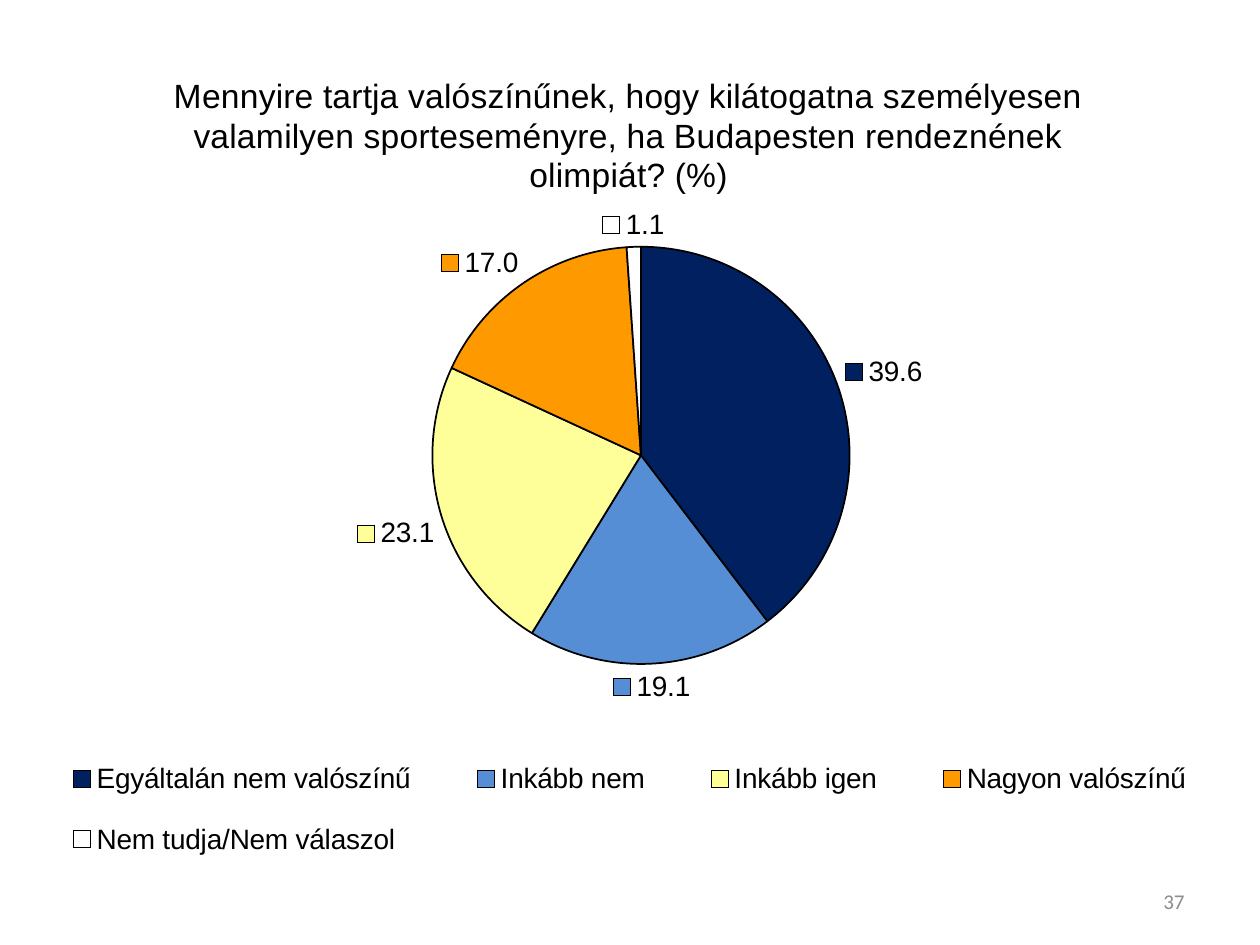
from dataclasses import dataclass

from pptx import Presentation
from pptx.chart.data import CategoryChartData
from pptx.dml.color import RGBColor
from pptx.enum.chart import XL_CHART_TYPE, XL_LABEL_POSITION, XL_LEGEND_POSITION
from pptx.enum.text import MSO_ANCHOR, PP_ALIGN
from pptx.oxml import parse_xml
from pptx.oxml.ns import nsdecls
from pptx.util import Inches, Pt


@dataclass(frozen=True)
class Theme:
    text: str = "000000"
    muted: str = "8C8C8C"
    chart_font: str = "Arial"
    number_font: str = "Calibri"
    title_size: float = 19.2
    chart_size: int = 16
    number_size: int = 12
    outline: int = 1


QUESTION = (
    "Mennyire tartja valószínűnek, hogy kilátogatna személyesen "
    "valamilyen sporteseményre, ha Budapesten rendeznének olimpiát? (%)"
)
ANSWERS = [
    ("Egyáltalán nem valószínű", 39.6, "002060"),
    ("Inkább nem", 19.1, "558ED5"),
    ("Inkább igen", 23.1, "FFFF99"),
    ("Nagyon valószínű", 17.0, "FF9900"),
    ("Nem tudja/Nem válaszol", 1.1, "FFFFFF"),
]


def layout_xml(x, y, width=None, height=None, inner=False):
    """Manual chart layout, in fractions of the chart area."""
    parts = [("layoutTarget", "inner")] if inner else []
    parts += [("xMode", "edge"), ("yMode", "edge"), ("x", x), ("y", y)]
    if width is not None:
        parts += [("w", width), ("h", height)]
    body = "".join(f'<c:{tag} val="{value}"/>' for tag, value in parts)
    return parse_xml(
        f'<c:layout {nsdecls("c")}><c:manualLayout>{body}</c:manualLayout></c:layout>'
    )


def place(element, layout, before):
    """Swap in a layout ahead of the first following sibling named in before."""
    for old in element.xpath("./c:layout"):
        element.remove(old)
    followers = element.xpath("|".join(f"./c:{tag}" for tag in before))
    followers[0].addprevious(layout)


class SlideBuilder:
    def __init__(self, slide, theme):
        self.slide = slide
        self.theme = theme

    def style(self, font, size, family, color):
        font.size = Pt(size)
        font.name = family
        font.bold = False
        font.color.rgb = RGBColor.from_string(color)

    def page_number(self, number, left, top, width, height):
        box = self.slide.shapes.add_textbox(
            Inches(left), Inches(top), Inches(width), Inches(height)
        )
        frame = box.text_frame
        frame.word_wrap = True
        frame.vertical_anchor = MSO_ANCHOR.MIDDLE
        para = frame.paragraphs[0]
        para.alignment = PP_ALIGN.RIGHT
        span = para.add_run()
        span.text = number
        self.style(span.font, self.theme.number_size, self.theme.number_font, self.theme.muted)

    def pie(self, title, answers, left, top, width, height):
        theme = self.theme
        names, values, colors = zip(*answers)
        data = CategoryChartData(number_format="###0.0")
        data.categories = names
        data.add_series("Series 1", values)
        chart = self.slide.shapes.add_chart(
            XL_CHART_TYPE.PIE, Inches(left), Inches(top), Inches(width), Inches(height), data
        ).chart
        self.style(chart.font, theme.chart_size, theme.chart_font, theme.text)

        chart.has_title = True
        span = chart.chart_title.text_frame.paragraphs[0].add_run()
        span.text = title
        self.style(span.font, theme.title_size, theme.chart_font, theme.text)
        chart.chart_title.include_in_layout = False

        chart.has_legend = True
        chart.legend.position = XL_LEGEND_POSITION.BOTTOM
        chart.legend.include_in_layout = False

        plot = chart.plots[0]
        plot.vary_by_categories = True
        for index, color in enumerate(colors):
            wedge = plot.series[0].points[index].format
            wedge.fill.solid()
            wedge.fill.fore_color.rgb = RGBColor.from_string(color)
            wedge.line.color.rgb = RGBColor.from_string(theme.text)
            wedge.line.width = Pt(theme.outline)

        labels = plot.series[0].data_labels
        labels.show_value = True
        labels.show_percentage = False
        labels.show_legend_key = True
        labels.number_format = "###0.0"
        labels.number_format_is_linked = False
        labels.position = XL_LABEL_POSITION.OUTSIDE_END
        self.style(labels.font, theme.chart_size, theme.chart_font, theme.text)
        self.arrange(chart)

    def arrange(self, chart):
        area = chart.element.xpath("./c:chart/c:plotArea")[0]
        legend = chart.element.xpath("./c:chart/c:legend")[0]
        heading = chart.element.xpath("./c:chart/c:title")[0]
        place(area, layout_xml(0.078, 0.233, 0.862, 0.495, inner=True), ["pieChart"])
        place(legend, layout_xml(0.005, 0.81, 0.99, 0.18), ["overlay", "spPr", "txPr"])
        place(heading, layout_xml(0.127, 0.02), ["overlay", "spPr", "txPr"])


def main():
    deck = Presentation()
    deck.slide_width, deck.slide_height = Inches(10), Inches(7.5)
    page = deck.slides.add_slide(deck.slide_layouts[6])
    builder = SlideBuilder(page, Theme())
    builder.page_number("37", 7.17, 6.95, 2.33, 0.4)
    builder.pie(QUESTION, ANSWERS, 0.08, 0.4, 9.84, 6.69)
    deck.save("out.pptx")


if __name__ == "__main__":
    main()
